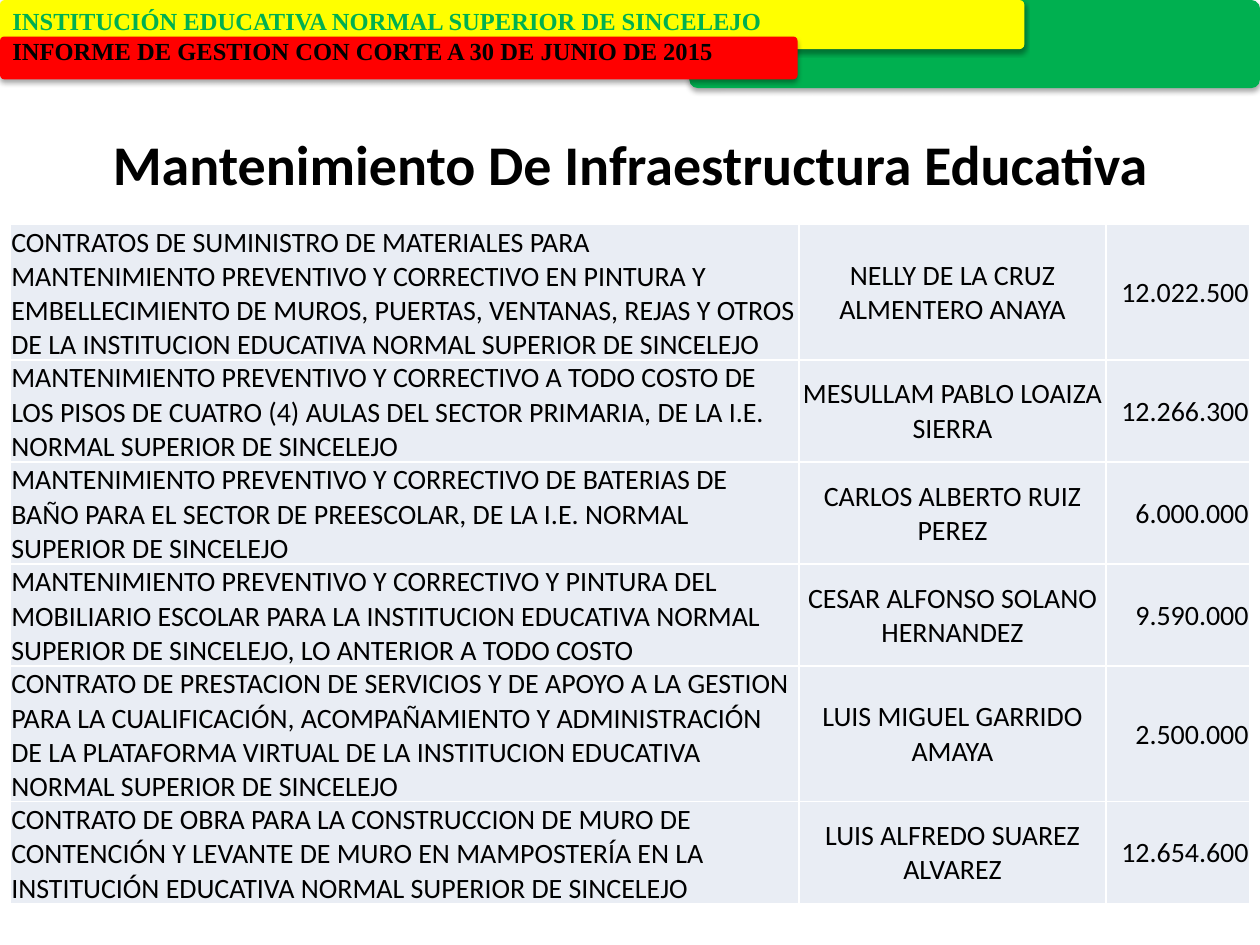
from lxml.etree import SubElement
from pptx import Presentation
from pptx.dml.color import RGBColor
from pptx.enum.shapes import MSO_SHAPE
from pptx.enum.text import MSO_ANCHOR, MSO_AUTO_SIZE, PP_ALIGN
from pptx.oxml import parse_xml
from pptx.oxml.ns import nsdecls, qn
from pptx.util import Inches, Pt

COLORS = {
    "green": "00B050",
    "yellow": "FFFF00",
    "red": "FF0000",
    "black": "000000",
    "white": "FFFFFF",
    "cell": "E9EDF4",
}

BANDS = [
    ("green", 5.47, 0, 4.53, 0.7),
    ("yellow", 0, 0, 8.13, 0.39),
    ("red", 0, 0.29, 6.33, 0.34),
]

HEADER = [
    ("INSTITUCIÓN EDUCATIVA NORMAL SUPERIOR DE SINCELEJO", "green"),
    ("INFORME DE GESTION CON CORTE A 30 DE JUNIO DE 2015", "black"),
]

TITLE = [("Mantenimiento De Infraestructura Educativa", "black")]

COLUMN_WIDTHS = [6.26, 2.44, 1.14]
COLUMN_ALIGNMENTS = [PP_ALIGN.LEFT, PP_ALIGN.CENTER, PP_ALIGN.RIGHT]
ROW_HEIGHTS = [1.07, 0.81, 0.81, 0.81, 1.07, 0.81]
CONTRACTS = [
    ("CONTRATOS DE SUMINISTRO DE MATERIALES PARA MANTENIMIENTO PREVENTIVO Y "
     "CORRECTIVO EN PINTURA Y EMBELLECIMIENTO DE MUROS, PUERTAS, VENTANAS, REJAS "
     "Y OTROS DE LA INSTITUCION EDUCATIVA NORMAL SUPERIOR DE SINCELEJO",
     "NELLY DE LA CRUZ ALMENTERO ANAYA", "12.022.500"),
    ("MANTENIMIENTO PREVENTIVO Y CORRECTIVO A TODO COSTO DE LOS PISOS DE CUATRO "
     "(4) AULAS DEL SECTOR PRIMARIA, DE LA I.E. NORMAL SUPERIOR DE SINCELEJO",
     "MESULLAM PABLO LOAIZA SIERRA", "12.266.300"),
    ("MANTENIMIENTO PREVENTIVO Y CORRECTIVO DE BATERIAS DE BAÑO PARA EL SECTOR "
     "DE PREESCOLAR, DE LA I.E. NORMAL SUPERIOR DE SINCELEJO",
     "CARLOS ALBERTO RUIZ PEREZ", "6.000.000"),
    ("MANTENIMIENTO PREVENTIVO Y CORRECTIVO Y PINTURA DEL MOBILIARIO ESCOLAR PARA "
     "LA INSTITUCION EDUCATIVA NORMAL SUPERIOR DE SINCELEJO, LO ANTERIOR A TODO COSTO",
     "CESAR ALFONSO SOLANO HERNANDEZ", "9.590.000"),
    ("CONTRATO DE PRESTACION DE SERVICIOS Y DE APOYO A LA GESTION PARA LA "
     "CUALIFICACIÓN, ACOMPAÑAMIENTO Y ADMINISTRACIÓN DE LA PLATAFORMA VIRTUAL DE LA "
     "INSTITUCION EDUCATIVA NORMAL SUPERIOR DE SINCELEJO",
     "LUIS MIGUEL GARRIDO AMAYA", "2.500.000"),
    ("CONTRATO DE OBRA PARA LA CONSTRUCCION DE MURO DE CONTENCIÓN Y LEVANTE DE MURO "
     "EN MAMPOSTERÍA EN LA INSTITUCIÓN EDUCATIVA NORMAL SUPERIOR DE SINCELEJO",
     "LUIS ALFREDO SUAREZ ALVAREZ", "12.654.600"),
]


def rgb(name):
    return RGBColor.from_string(COLORS[name])


def format_paragraph(para, font, size, color, bold=False, align=PP_ALIGN.LEFT):
    para.alignment = align
    for span in para.runs:
        span.font.name = font
        span.font.size = Pt(size)
        span.font.bold = bold
        span.font.color.rgb = rgb(color)


def add_shadow(shape):
    shape.shadow.inherit = False
    effects = shape._element.spPr.find(qn("a:effectLst"))
    effects.append(parse_xml(
        f'<a:outerShdw {nsdecls("a")} blurRad="{Pt(3.1)}" dist="{Pt(1.8)}" '
        f'dir="5400000" rotWithShape="0"><a:srgbClr val="{COLORS["black"]}">'
        '<a:alpha val="35000"/></a:srgbClr></a:outerShdw>'))


def add_band(page, color, left, top, width, height):
    offset = (width - height) / 2
    band = page.shapes.add_shape(
        MSO_SHAPE.ROUNDED_RECTANGLE, Inches(left + offset), Inches(top - offset),
        Inches(height), Inches(width))
    band.rotation = 90
    band.adjustments[0] = 0.1
    band.fill.solid()
    band.fill.fore_color.rgb = rgb(color)
    band.line.fill.background()
    add_shadow(band)


def add_text(page, lines, left, top, width, height, font, size, align, wrap):
    box = page.shapes.add_textbox(
        Inches(left), Inches(top), Inches(width), Inches(height))
    frame = box.text_frame
    frame.word_wrap = wrap
    frame.auto_size = MSO_AUTO_SIZE.SHAPE_TO_FIT_TEXT
    frame.text = "\n".join(text for text, color in lines)
    for para, (text, color) in zip(frame.paragraphs, lines):
        format_paragraph(para, font, size, color, True, align)


def add_borders(cell):
    properties = cell._tc.get_or_add_tcPr()
    for position, side in enumerate(("lnL", "lnR", "lnT", "lnB")):
        line = parse_xml(
            f'<a:{side} {nsdecls("a")} w="{Pt(1)}"/>')
        fill = SubElement(line, qn("a:solidFill"))
        SubElement(fill, qn("a:srgbClr"), val=COLORS["white"])
        properties.insert(position, line)


def fill_cell(cell, text, align):
    cell.text_frame.text = text
    cell.vertical_anchor = MSO_ANCHOR.MIDDLE
    cell.margin_left = cell.margin_right = cell.margin_top = Inches(0.01)
    cell.margin_bottom = 0
    cell.fill.solid()
    cell.fill.fore_color.rgb = rgb("cell")
    add_borders(cell)
    format_paragraph(cell.text_frame.paragraphs[0], "Calibri", 16, "black", align=align)


def add_contracts(page, left, top):
    table = page.shapes.add_table(
        len(CONTRACTS), len(COLUMN_WIDTHS), Inches(left), Inches(top),
        Inches(sum(COLUMN_WIDTHS)), Inches(sum(ROW_HEIGHTS))).table
    table.first_row = False
    table.horz_banding = False
    for column, width in zip(table.columns, COLUMN_WIDTHS):
        column.width = Inches(width)
    for row, height, contract in zip(table.rows, ROW_HEIGHTS, CONTRACTS):
        row.height = Inches(height)
        for cell, text, align in zip(row.cells, contract, COLUMN_ALIGNMENTS):
            fill_cell(cell, text, align)


def main():
    deck = Presentation()
    deck.slide_width = Inches(10)
    deck.slide_height = Inches(7.5)
    page = deck.slides.add_slide(deck.slide_layouts[6])
    for band in BANDS:
        add_band(page, *band)
    add_text(page, HEADER, 0, 0, 10, 0.57, "Times New Roman", 14, PP_ALIGN.LEFT, True)
    add_text(page, TITLE, 0.76, 0.98, 8.49, 0.64, "Calibri", 32, PP_ALIGN.CENTER, False)
    add_contracts(page, 0.08, 1.78)
    deck.save("out.pptx")


if __name__ == "__main__":
    main()
